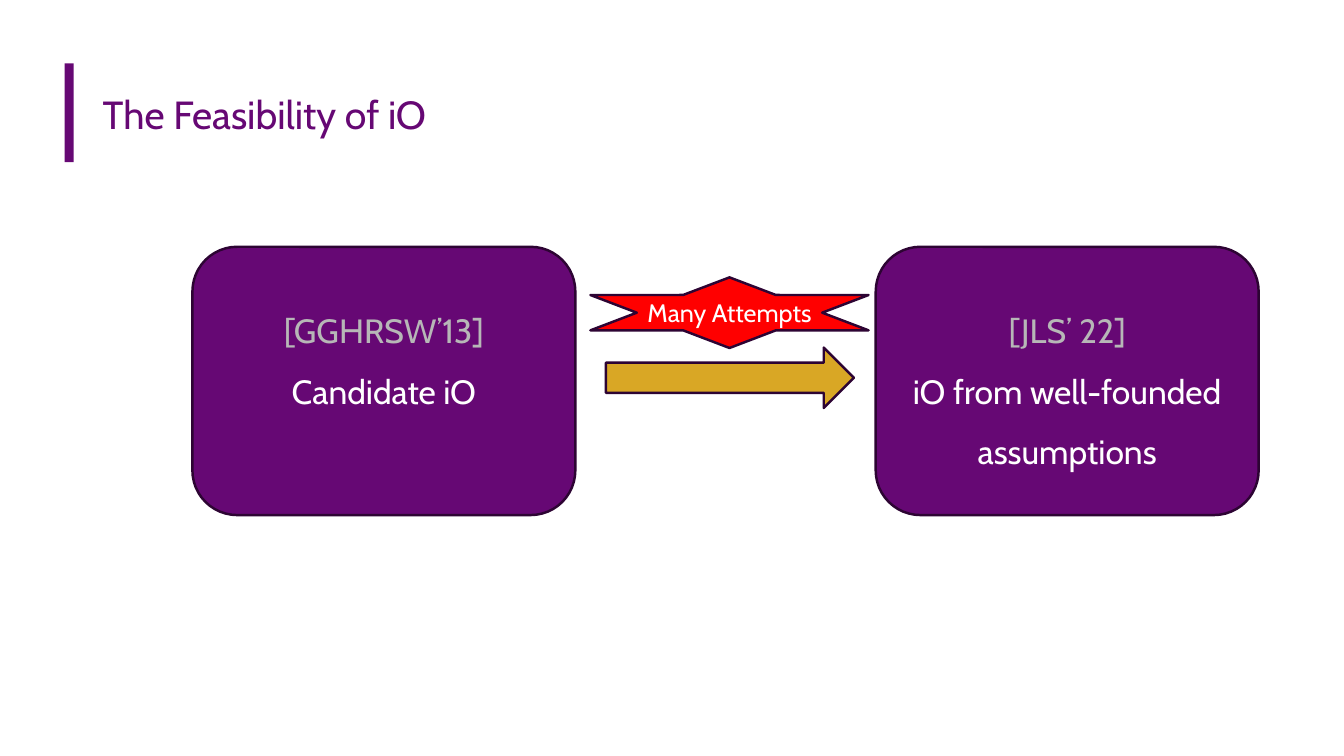
from pptx import Presentation
from pptx.dml.color import RGBColor
from pptx.enum import shapes, text
from pptx.util import Cm, Pt

FONT = "Cabin"
PURPLE, DARK, WHITE, GREY = "660874", "2D0433", "FFFFFF", "B7B7B7"
RED, GOLD = "FF0000", "D9A725"
LINE_PITCH = 1.52  # height of one line of card text, in cm


def color(hex_string):
    return RGBColor.from_string(hex_string)


def add_block(slide, kind, box, fill, outline=DARK):
    shape = slide.shapes.add_shape(kind, *(Cm(length) for length in box))
    shape.shadow.inherit = False
    shape.fill.solid()
    shape.fill.fore_color.rgb = color(fill)
    if outline:
        shape.line.color.rgb = color(outline)
        shape.line.width = Pt(1.75)
    else:
        shape.line.fill.background()
    return shape


def write_lines(frame, lines, size, align, spacing=1.0):
    """Write (wording, colour) pairs, one paragraph each."""
    frame.vertical_anchor = text.MSO_ANCHOR.MIDDLE
    for index, (wording, hex_string) in enumerate(lines):
        paragraph = frame.add_paragraph() if index else frame.paragraphs[0]
        paragraph.text = wording
        paragraph.alignment = align
        paragraph.line_spacing = spacing
        paragraph.font.name = FONT
        paragraph.font.size = Pt(size)
        paragraph.font.color.rgb = color(hex_string)


def add_title(slide, box, wording):
    left, top, width, height = box
    # Accent bar
    add_block(slide, shapes.MSO_SHAPE.RECTANGLE,
              (left, top + 0.58, 0.23, 2.49), PURPLE, outline=None)
    # Heading
    heading = slide.shapes.add_textbox(
        Cm(left + 0.71), Cm(top), Cm(width - 0.71), Cm(height))
    heading.text_frame.word_wrap = True
    write_lines(heading.text_frame, [(wording, PURPLE)], 28, text.PP_ALIGN.LEFT)


def add_card(slide, box, citation, result_lines):
    card = add_block(slide, shapes.MSO_SHAPE.FLOWCHART_ALTERNATE_PROCESS, box, PURPLE)
    frame = card.text_frame
    frame.word_wrap = True
    # Reserve room for two result lines so that citations align across cards
    frame.margin_bottom = Cm(0.13 + LINE_PITCH * (2 - len(result_lines)))
    lines = [(citation, GREY)] + [(line, WHITE) for line in result_lines]
    write_lines(frame, lines, 24, text.PP_ALIGN.CENTER, spacing=1.5)


def add_transition(slide, box, wording):
    left, top, width, height = box
    # Arrow below the star
    add_block(slide, shapes.MSO_SHAPE.RIGHT_ARROW,
              (left + 0.77, top + 2.54, 6.25, 1.52), GOLD)
    # Star
    star = add_block(slide, shapes.MSO_SHAPE.STAR_6_POINT,
                     (left + 0.38, top + 0.77, 7.01, 1.78), RED)
    star.text_frame.word_wrap = False
    write_lines(star.text_frame, [(wording, WHITE)], 18, text.PP_ALIGN.CENTER)


def build_feasibility_slide(presentation):
    slide = presentation.slides.add_slide(presentation.slide_layouts[6])
    add_title(slide, (1.63, 1.02, 29.92, 3.68), "The Feasibility of iO")

    # Two cards with the transition in the gap between them
    left, top, width, height, gap = 4.85, 6.22, 9.65, 6.76, 7.57
    add_card(slide, (left, top, width, height), "[GGHRSW’13]", ["Candidate iO"])
    add_card(slide, (left + width + gap, top, width, height), "[JLS’ 22]",
             ["iO from well-founded", "assumptions"])
    add_transition(slide, (left + width, top, gap, height), "Many Attempts")


def main():
    presentation = Presentation()
    presentation.slide_width = Cm(33.87)
    presentation.slide_height = Cm(19.05)
    build_feasibility_slide(presentation)
    presentation.save("out.pptx")


if __name__ == "__main__":
    main()
